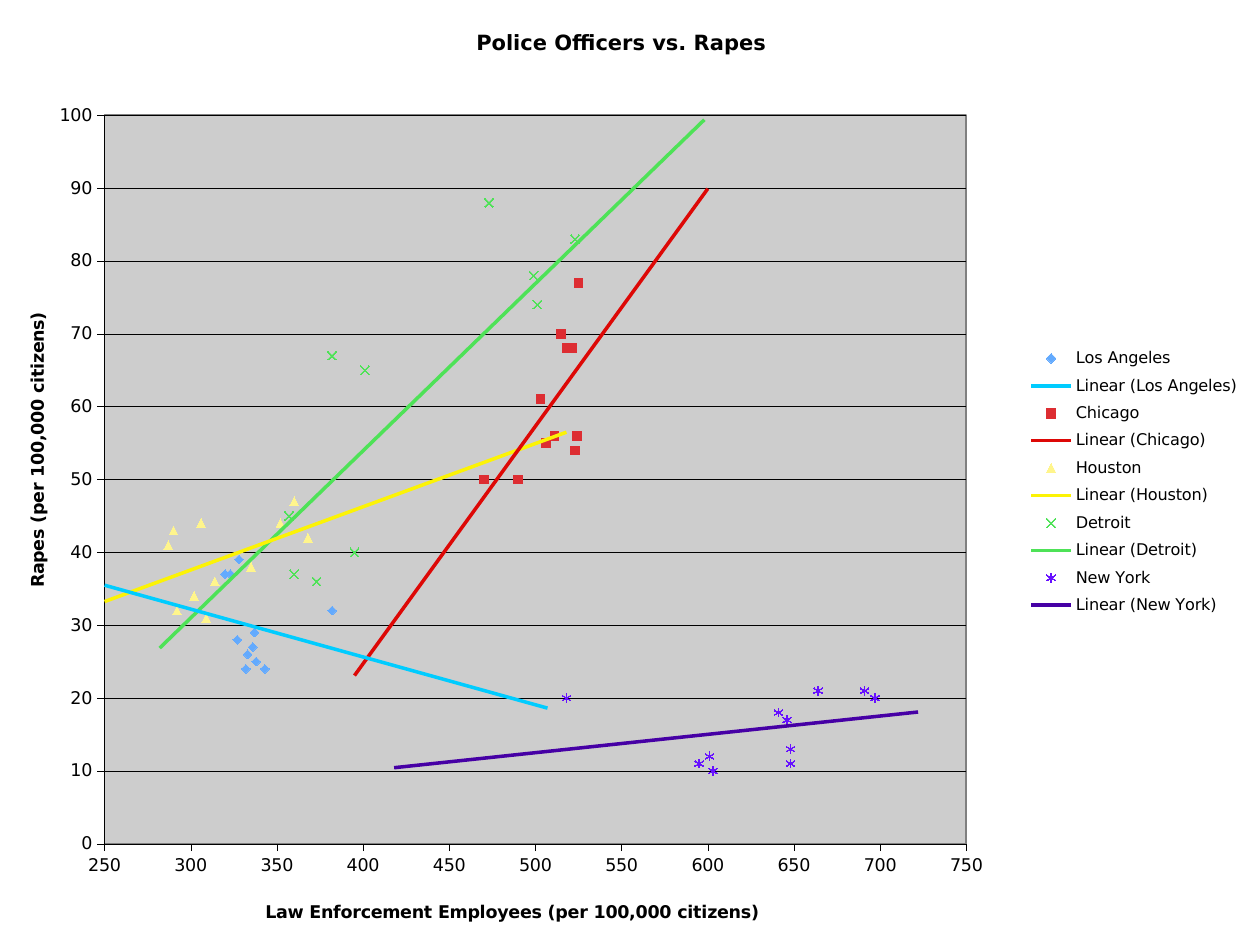
from lxml import etree
from pptx import Presentation
from pptx.chart.data import XyChartData
from pptx.dml.color import RGBColor
from pptx.enum.chart import XL_CHART_TYPE, XL_LEGEND_POSITION, XL_MARKER_STYLE, XL_TICK_MARK
from pptx.oxml import parse_xml
from pptx.util import Pt

SCATTER = XL_CHART_TYPE.XY_SCATTER
LEGEND_RIGHT = XL_LEGEND_POSITION.RIGHT
DIAMOND = XL_MARKER_STYLE.DIAMOND
SQUARE = XL_MARKER_STYLE.SQUARE
TRIANGLE = XL_MARKER_STYLE.TRIANGLE
CROSS = XL_MARKER_STYLE.X
STAR = XL_MARKER_STYLE.STAR
TICK_OUTSIDE = XL_TICK_MARK.OUTSIDE
TICK_NONE = XL_TICK_MARK.NONE

NS = (
    'xmlns:c="http://schemas.openxmlformats.org/drawingml/2006/chart" '
    'xmlns:a="http://schemas.openxmlformats.org/drawingml/2006/main"'
)
C = "{http://schemas.openxmlformats.org/drawingml/2006/chart}"

THEME = {
    "font": "DejaVu Sans",
    "ink": RGBColor.from_string("000000"),
    "plot": "CDCDCD",
    "plot_border": "808080",
    "title": Pt(12),
    "axis": Pt(10),
    "legend": Pt(9.2),
    "hairline": Pt(0.25),
}

CITIES = [
    {"name": "Los Angeles", "marker": DIAMOND, "color": "63AAFE", "filled": True,
     "trend": "00CCFF", "forward": 125, "backward": 70,
     "officers": [328, 323, 320, 382, 337, 327, 336, 333, 338, 343, 332],
     "rapes": [39, 37, 37, 32, 29, 28, 27, 26, 25, 24, 24]},
    {"name": "Chicago", "marker": SQUARE, "color": "DD2D32", "filled": True,
     "trend": "DD0806", "forward": 75, "backward": 75,
     "officers": [525, 521, 518, 515, 503, 511, 523, 524, 506, 490, 470],
     "rapes": [77, 68, 68, 70, 61, 56, 54, 56, 55, 50, 50]},
    {"name": "Houston", "marker": TRIANGLE, "color": "FFF58C", "filled": True,
     "trend": "FCF305", "forward": 150, "backward": 37,
     "officers": [368, 360, 352, 335, 306, 290, 287, 292, 302, 314, 309],
     "rapes": [42, 47, 44, 38, 44, 43, 41, 32, 34, 36, 31]},
    {"name": "Detroit", "marker": CROSS, "color": "4EE257", "filled": False,
     "trend": "4EE257", "forward": 75, "backward": 75,
     "officers": [523, 518, 501, 473, 499, 401, 382, 395, 373, 360, 357],
     "rapes": [83, 68, 74, 88, 78, 65, 67, 40, 36, 37, 45]},
    {"name": "New York", "marker": STAR, "color": "6711FF", "filled": False,
     "trend": "4600A5", "forward": 25, "backward": 100,
     "officers": [691, 697, 664, 518, 641, 646, 648, 648, 595, 603, 601],
     "rapes": [21, 20, 21, 20, 18, 17, 13, 11, 11, 10, 12]},
]


def set_layout(element, index, x, y, size=None, inner=False):
    for old in element.findall(C + "layout"):
        element.remove(old)
    layout = parse_xml(f"<c:layout {NS}><c:manualLayout/></c:layout>")
    settings = [("layoutTarget", "inner")] if inner else []
    settings += [("xMode", "edge"), ("yMode", "edge"), ("x", x), ("y", y)]
    if size:
        settings += [("w", size[0]), ("h", size[1])]
    for tag, value in settings:
        etree.SubElement(layout[0], C + tag).set("val", str(value))
    element.insert(index, layout)


def write_title(title, text, size, x, y):
    run = title.text_frame.paragraphs[0].add_run()
    run.text = text
    run.font.name = THEME["font"]
    run.font.size = size
    run.font.bold = True
    run.font.color.rgb = THEME["ink"]
    set_layout(title._element, 1, x, y)


prs = Presentation()
prs.slide_width = Pt(720)
prs.slide_height = Pt(540)
slide = prs.slides.add_slide(prs.slide_layouts[6])

data = XyChartData()
for city in CITIES:
    points = data.add_series(city["name"])
    for officers, rapes in zip(city["officers"], city["rapes"]):
        points.add_data_point(officers, rapes)

chart = slide.shapes.add_chart(
    SCATTER, 0, 0, prs.slide_width, prs.slide_height, data
).chart
chart.font.name = THEME["font"]
chart.font.size = THEME["axis"]
chart.font.color.rgb = THEME["ink"]
chart.plots[0].vary_by_categories = False

chart.has_title = True
write_title(chart.chart_title, "Police Officers vs. Rapes", THEME["title"], 0.375, 0.026)

axes = [
    (chart.category_axis, 250, 750, 50, "Law Enforcement Employees (per 100,000 citizens)", 0.208, 0.95),
    (chart.value_axis, 0, 100, 10, "Rapes (per 100,000 citizens)", 0.018, 0.327),
]
for axis, low, high, step, label, x, y in axes:
    axis.minimum_scale = low
    axis.maximum_scale = high
    axis.major_unit = step
    axis.major_tick_mark = TICK_OUTSIDE
    axis.minor_tick_mark = TICK_NONE
    axis.has_major_gridlines = axis is chart.value_axis
    axis.format.line.color.rgb = THEME["ink"]
    axis.format.line.width = THEME["hairline"]
    axis.tick_labels.font.name = THEME["font"]
    axis.tick_labels.font.size = THEME["axis"]
    axis.tick_labels.font.color.rgb = THEME["ink"]
    axis.has_title = True
    write_title(axis.axis_title, label, THEME["axis"], x, y)

chart.value_axis.axis_title.text_frame._txBody.bodyPr.set("rot", "-5400000")
gridline = chart.value_axis.major_gridlines.format.line
gridline.color.rgb = THEME["ink"]
gridline.width = THEME["hairline"]

for city, series in zip(CITIES, chart.plots[0].series):
    color = RGBColor.from_string(city["color"])
    series.format.line.fill.background()
    series.marker.style = city["marker"]
    series.marker.size = 5
    series.marker.format.line.color.rgb = color
    if city["filled"]:
        series.marker.format.fill.solid()
        series.marker.format.fill.fore_color.rgb = color
    else:
        series.marker.format.fill.background()
    trend = parse_xml(
        f'<c:trendline {NS}><c:name>Linear ({city["name"]})</c:name>'
        f'<c:spPr><a:ln w="{Pt(2)}"><a:solidFill><a:srgbClr val="{city["trend"]}"/>'
        '</a:solidFill></a:ln></c:spPr><c:trendlineType val="linear"/>'
        f'<c:forward val="{city["forward"]}"/><c:backward val="{city["backward"]}"/>'
        '<c:dispRSqr val="0"/><c:dispEq val="0"/></c:trendline>'
    )
    series._element.find(C + "xVal").addprevious(trend)
    series.smooth = False

chart.has_legend = True
legend = chart.legend
legend.position = LEGEND_RIGHT
legend.include_in_layout = False
legend.font.name = THEME["font"]
legend.font.size = THEME["legend"]
legend.font.color.rgb = THEME["ink"]
set_layout(legend._element, 1, 0.81, 0.36, (0.18, 0.3))

plot_area = chart._chartSpace.chart.plotArea
set_layout(plot_area, 0, 0.083, 0.122, (0.684, 0.771), inner=True)
plot_area.append(parse_xml(
    f'<c:spPr {NS}><a:solidFill><a:srgbClr val="{THEME["plot"]}"/></a:solidFill>'
    f'<a:ln w="{Pt(1)}"><a:solidFill><a:srgbClr val="{THEME["plot_border"]}"/>'
    '</a:solidFill></a:ln></c:spPr>'
))

prs.save("out.pptx")
